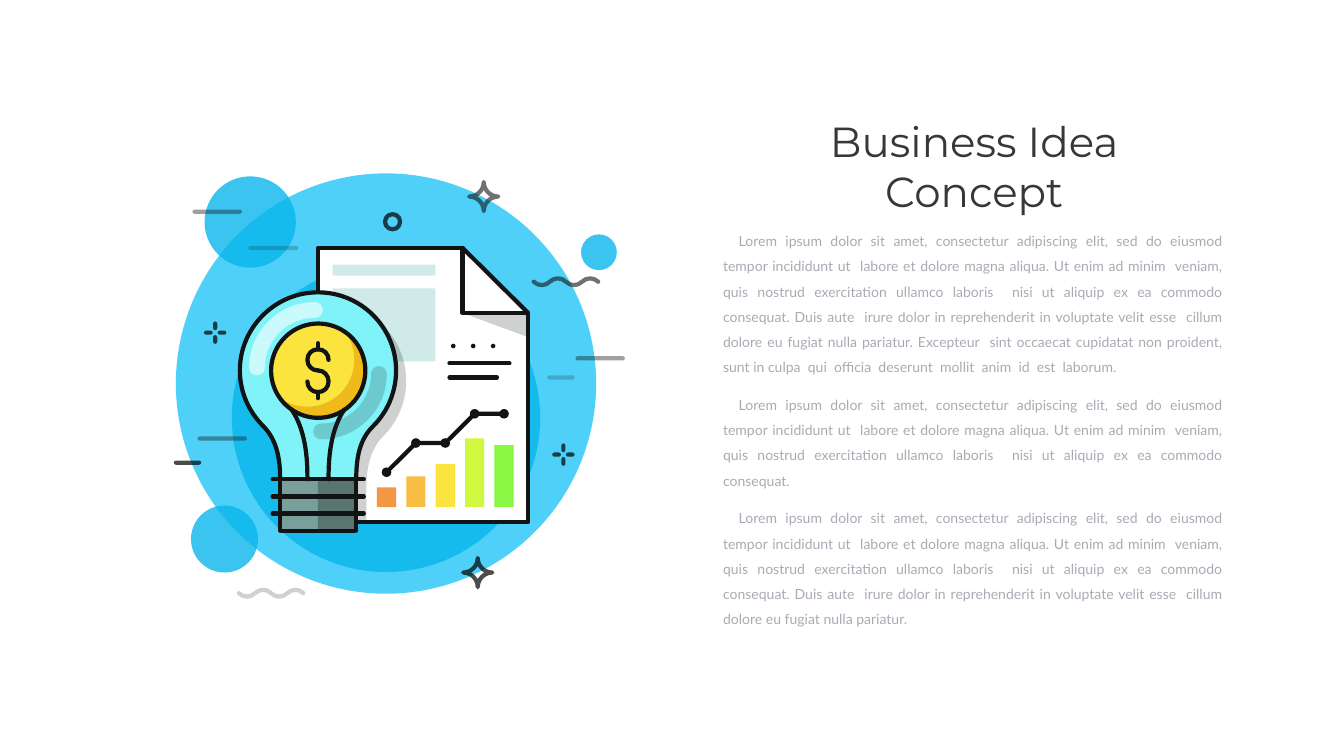
import pptx
import pptx.util
import pptx.dml.color
import pptx.enum.shapes
import pptx.enum.text
import pptx.oxml.ns
import lxml.etree
from pptx.util import Cm, Pt


class Theme:
    sky, blue, aqua, mint = "4ED0F8", "09B6EB", "80F3F8", "D0EAE9"
    white, ink, shade, black, gloom = "FFFFFF", "111315", "111415", "000000", "212121"
    gold, amber, metal = "FBE43E", "EEBB1B", "789F9A"
    bars = ["F49745", "F7BE43", "FBE43E", "D1F841", "89F743"]
    title, body = "373737", "AAAAB5"
    title_font, body_font = "Montserrat", "Lato"
    title_size, body_size = Pt(60), Pt(20)
    stroke, gloss = Pt(6), Pt(22.5)


INCH = 2.54  # the drawing grid is in inches, lengths are given in cm
PRESETS = {"oval": pptx.enum.shapes.MSO_SHAPE.OVAL,
           "rect": pptx.enum.shapes.MSO_SHAPE.RECTANGLE}
qn = pptx.oxml.ns.qn

prs = pptx.Presentation()
prs.slide_width, prs.slide_height = Cm(26.67 * INCH), Cm(15 * INCH)
s = prs.slides.add_slide(prs.slide_layouts[6])


def draw(kind, geo, fill=None, line=None, alpha=100, width=Theme.stroke, close=False):
    """oval/rect: geo is a box; line: two ends; path: points and six-number curves."""
    if kind in PRESETS:
        sp = s.shapes.add_shape(PRESETS[kind], *[Cm(v * INCH) for v in geo])
    elif kind == "line":
        sp = s.shapes.add_connector(pptx.enum.shapes.MSO_CONNECTOR.STRAIGHT,
                                    *[Cm(v * INCH) for v in geo])
    else:
        pts = [(Cm(seg[i] * INCH), Cm(seg[i + 1] * INCH))
               for seg in geo for i in range(0, len(seg), 2)]
        fb = s.shapes.build_freeform(*pts[0])
        fb.add_line_segments(pts[1:], close=close)
        sp = fb.convert_to_shape()
        # Join each three points of a curve into one Bezier segment
        outline = next(sp._element.spPr.iter(qn("a:path")))
        steps = iter(outline.findall(qn("a:lnTo")))
        for seg in geo[1:]:
            step = next(steps)
            if len(seg) == 6:
                step.tag = qn("a:cubicBezTo")
                for extra in (next(steps), next(steps)):
                    step.append(extra[0])
                    outline.remove(extra)
    if fill:
        sp.fill.solid()
        sp.fill.fore_color.rgb = pptx.dml.color.RGBColor.from_string(fill)
    elif kind != "line":
        sp.fill.background()
    spPr = sp._element.spPr
    if line:
        sp.line.color.rgb = pptx.dml.color.RGBColor.from_string(line)
        sp.line.width = width
        ln = spPr.find(qn("a:ln"))
        ln.set("cap", "rnd")
        lxml.etree.SubElement(ln, qn("a:round"))
    else:
        sp.line.fill.background()
    if alpha < 100:
        for clr in spPr.iter(qn("a:srgbClr")):
            lxml.etree.SubElement(clr, qn("a:alpha")).set("val", str(alpha * 1000))
    lxml.etree.SubElement(spPr, qn("a:effectLst"))


# Background circles
draw("oval", (3.49, 3.44, 8.34, 8.34), Theme.sky)
for x, y, d in [(4.6, 5.23, 6.12), (4.06, 3.5, 1.81), (3.79, 10.03, 1.33), (11.53, 4.65, 0.71)]:
    draw("oval", (x, y, d, d), Theme.blue, alpha=80)

# Body text
lorem = [
    "Lorem ipsum dolor sit amet, consectetur adipiscing elit, sed do eiusmod tempor "
    "incididunt ut  labore et dolore magna aliqua. Ut enim ad minim  veniam, quis nostrud "
    "exercitation ullamco laboris  nisi ut aliquip ex ea commodo consequat. ",
    "Duis aute  irure dolor in reprehenderit in voluptate velit esse  cillum dolore eu "
    "fugiat nulla pariatur. ",
    "Excepteur  sint occaecat cupidatat non proident, sunt in culpa  qui  officia  deserunt  "
    "mollit  anim  id  est  laborum. ",
]
sp = s.shapes.add_textbox(*[Cm(v * INCH) for v in (14.25, 4.4, 10.11, 7.67)])
tf = sp.text_frame
tf.word_wrap = True
tf.auto_size = pptx.enum.text.MSO_AUTO_SIZE.SHAPE_TO_FIT_TEXT
for i, sentences in enumerate((3, 1, 2)):
    p = tf.add_paragraph() if i else tf.paragraphs[0]
    p.text = "".join(lorem[:sentences])
    p.alignment = pptx.enum.text.PP_ALIGN.JUSTIFY
    p.line_spacing, p.space_before = 1.5, Pt(18)
    p.font.name, p.font.size = Theme.body_font, Theme.body_size
    p.font.color.rgb = pptx.dml.color.RGBColor.from_string(Theme.body)
    pPr = p._p.get_or_add_pPr()
    pPr.set("marL", "0")
    pPr.set("indent", str(Cm(0.31 * INCH)))

# Page with folded corner
page = [(10.48, 10.36), (10.48, 6.21), (9.18, 6.21), (9.18, 4.92), (6.31, 4.92), (6.31, 10.36)]
draw("path", page, Theme.white, close=True)
draw("path", [(9.18, 4.92), (9.18, 6.21), (10.48, 6.21)], Theme.white, close=True)
draw("path", [(10.48, 6.69), (9.18, 6.21), (10.48, 6.21)], Theme.shade, alpha=20, close=True)
for y, h in [(5.25, 0.22), (5.72, 1.45)]:
    draw("rect", (6.6, y, 2.04, h), Theme.mint)
draw("path", page, line=Theme.ink, close=True)
draw("line", (9.18, 4.92, 10.48, 6.21), line=Theme.ink)

# Dots and text lines on the page
for i in range(3):
    draw("oval", (8.95 + 0.395 * i, 6.82, 0.09, 0.09), Theme.ink)
for x, y in [(10.11, 7.21), (9.86, 7.49)]:
    draw("line", (8.92, y, x, y), line=Theme.ink)

# Bars with trend line
trend = [(7.67 + 0.583 * i, y) for i, y in enumerate((9.37, 8.79, 8.79, 8.21, 8.21))]
for (x, y), h, color in zip(trend, (0.39, 0.61, 0.85, 1.36, 1.23), Theme.bars):
    draw("oval", (x - 0.095, y - 0.095, 0.19, 0.19), Theme.ink)
    draw("rect", (x - 0.19, 10.06 - h, 0.38, h), color)
draw("path", trend, line=Theme.ink)

# Bulb shadow on the page
draw("path", [(6.51, 6.01), (6.44, 6.01, 6.38, 6.01, 6.31, 6.02), (6.31, 10.36), (7.27, 10.36),
              (7.27, 9.71), (7.27, 9.29, 7.34, 8.92, 7.61, 8.65),
              (7.89, 8.37, 8.06, 7.98, 8.06, 7.56), (8.06, 6.7, 7.37, 6.01, 6.51, 6.01)],
     Theme.shade, alpha=20, close=True)

# Bulb base and glass
draw("rect", (5.56, 9.51, 1.51, 1.01), Theme.metal)
draw("rect", (6.31, 9.47, 0.79, 1.07), Theme.shade, alpha=30)
bulb = [(7.07, 9.51), (7.07, 9.09, 7.13, 8.72, 7.41, 8.45), (7.69, 8.17, 7.86, 7.78, 7.86, 7.35),
        (7.86, 6.5, 7.17, 5.8, 6.31, 5.8), (5.46, 5.8, 4.76, 6.5, 4.76, 7.35),
        (4.76, 7.78, 4.94, 8.17, 5.22, 8.45), (5.49, 8.72, 5.56, 9.09, 5.56, 9.51)]
draw("path", bulb, Theme.aqua, close=True)
draw("path", bulb, line=Theme.ink)
for y in (9.51, 9.85, 10.19):
    draw("line", (5.41, y, 7.22, y), line=Theme.ink)
draw("line", (5.59, 10.53, 7.03, 10.53), line=Theme.ink)
for x in (5.56, 7.07):
    draw("line", (x, 9.51, x, 10.53), line=Theme.ink)

# Coin
coin = (5.38, 6.42, 1.87, 1.87)
draw("oval", coin, Theme.gold)
draw("path", [(6.86, 6.59), (6.97, 6.75, 7.03, 6.94, 7.03, 7.14),
              (7.03, 7.66, 6.61, 8.07, 6.1, 8.07), (5.9, 8.07, 5.71, 8.01, 5.55, 7.9),
              (5.72, 8.13, 6, 8.29, 6.31, 8.29), (6.83, 8.29, 7.25, 7.87, 7.25, 7.35),
              (7.25, 7.04, 7.09, 6.76, 6.86, 6.59)], Theme.amber, close=True)
draw("oval", coin, line=Theme.ink)

# Dollar sign
for arc in [
        [(6.31, 7.35), (6.19, 7.35, 6.1, 7.26, 6.1, 7.14), (6.1, 7.02, 6.19, 6.93, 6.31, 6.93)],
        [(6.31, 6.93), (6.43, 6.93, 6.52, 7.02, 6.52, 7.14)],
        [(6.31, 7.35), (6.43, 7.35, 6.52, 7.45, 6.52, 7.57), (6.52, 7.69, 6.43, 7.78, 6.31, 7.78)],
        [(6.31, 7.78), (6.19, 7.78, 6.1, 7.69, 6.1, 7.57)]]:
    draw("path", arc, line=Theme.ink)
for y in (6.81, 7.78):
    draw("line", (6.31, y, 6.31, y + 0.12), line=Theme.ink)

# Filament wires, mirrored about the bulb axis
for side in (-1, 1):
    near, far = 6.31 + 0.21 * side, 6.31 + 0.52 * side
    draw("path", [(near, 9.51), (near, 9.24, near, 8.59, far, 8.13)], line=Theme.ink)

# Glass highlight and shade
draw("path", [(5.1, 7.29), (5.1, 6.99, 5.22, 6.7, 5.44, 6.48), (5.66, 6.27, 5.94, 6.15, 6.25, 6.15)],
     line=Theme.white, alpha=58, width=Theme.gloss)
draw("path", [(7.52, 7.42), (7.52, 7.72, 7.4, 8.01, 7.18, 8.23), (6.96, 8.44, 6.68, 8.56, 6.37, 8.56)],
     line=Theme.gloom, alpha=20, width=Theme.gloss)

# Waves
for x, y, alpha in [(10.59, 5.59, 60), (4.74, 11.77, 20)]:
    wave = [(x, y)]
    for i in range(4):
        x0, bend = x + 0.32 * i, y + 0.09 * (-1)**i
        wave.append((x0 + 0.09, bend, x0 + 0.23, bend, x0 + 0.32, y))
    draw("path", wave, line=Theme.shade, alpha=alpha)

# Speed lines
for x, y, length, color, alpha in [
        (11.46, 7.11, 0.9, Theme.shade, 40), (3.86, 4.2, 0.9, Theme.shade, 40),
        (3.96, 8.7, 0.9, Theme.shade, 40), (10.9, 7.49, 0.46, Theme.shade, 20),
        (3.49, 9.18, 0.46, Theme.black, 70), (4.97, 4.92, 0.91, Theme.shade, 20)]:
    draw("line", (x, y, x + length, y), line=color, alpha=alpha)

# Four-pointed stars
for x, y, color, alpha in [(9.6, 3.9, Theme.shade, 60), (9.48, 11.36, Theme.black, 70)]:
    tips = [(0, 1), (-1, 0), (0, -1), (1, 0), (0, 1)]
    star = [(x, y + 0.29)]
    for (ax, ay), (bx, by) in zip(tips, tips[1:]):
        star.append((x + 0.13 * ax, y + 0.13 * ay, x + 0.13 * bx, y + 0.13 * by,
                     x + 0.29 * bx, y + 0.29 * by))
    draw("path", star, line=color, alpha=alpha, close=True)

# Sparkles and ring
for x, y in [(11.18, 9.02), (4.27, 6.6)]:
    for dx, dy in [(0, -1), (-1, 0), (0, 1), (1, 0)]:
        draw("line", (x + 0.09 * dx, y + 0.09 * dy, x + 0.18 * dx, y + 0.18 * dy),
             line=Theme.black, alpha=70)
draw("oval", (7.64, 4.25, 0.3, 0.3), line=Theme.black, alpha=70)

# Title
sp = s.shapes.add_textbox(*[Cm(v * INCH) for v in (15.49, 2.24, 7.68, 2.12)])
tf = sp.text_frame
tf.word_wrap = True
tf.auto_size = pptx.enum.text.MSO_AUTO_SIZE.SHAPE_TO_FIT_TEXT
p = tf.paragraphs[0]
p.text = "Business Idea Concept"
p.alignment = pptx.enum.text.PP_ALIGN.CENTER
p.font.name, p.font.size = Theme.title_font, Theme.title_size
p.font.color.rgb = pptx.dml.color.RGBColor.from_string(Theme.title)

prs.save("out.pptx")
